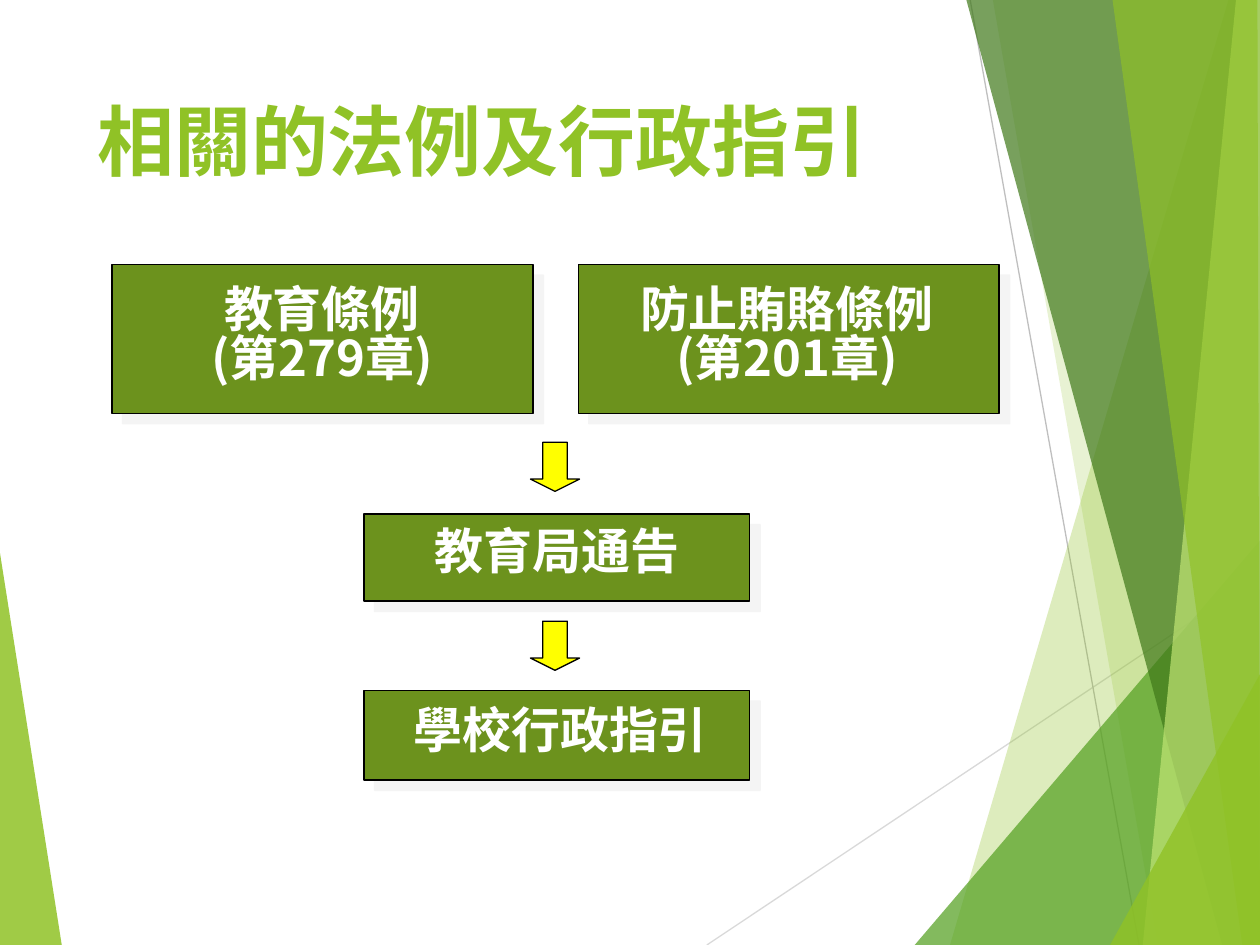
from lxml.etree import SubElement
from pptx import Presentation
from pptx.dml.color import RGBColor
from pptx.enum.shapes import MSO_CONNECTOR, MSO_SHAPE
from pptx.enum.text import MSO_ANCHOR, PP_ALIGN
from pptx.oxml.ns import qn
from pptx.util import Inches, Pt


def color(text):
    return RGBColor.from_string(text)


class Deck:
    lime = "90C226"
    moss = "6C921D"
    black = "000000"
    white = "FFFFFF"
    head = "Lato"
    body = "Noto Sans CJK SC"

    def __init__(self):
        self.file = Presentation()
        self.file.slide_width = Inches(10)
        self.file.slide_height = Inches(7.5)
        self.slide = self.file.slides.add_slide(self.file.slide_layouts[5])
        self.shapes = self.slide.shapes

    def paint(self, shape, fill, line=None):
        shape.shadow.inherit = False
        shape.fill.solid()
        shape.fill.fore_color.rgb = color(fill)
        if line:
            shape.line.color.rgb = color(line)
            shape.line.width = Pt(0.75)
        else:
            shape.line.fill.background()

    def add_text(self, para, text, size, font, ink):
        run = para.add_run()
        run.text = text
        run.font.size = Pt(size)
        run.font.bold = True
        run.font.name = font
        run.font.color.rgb = color(ink)
        SubElement(run.font._element, qn("a:ea"), typeface=font)

    def title(self, text, box):
        shape = self.shapes.title
        shape.left, shape.top, shape.width, shape.height = map(Inches, box)
        frame = shape.text_frame
        frame.vertical_anchor = MSO_ANCHOR.MIDDLE
        para = frame.paragraphs[0]
        para.alignment = PP_ALIGN.LEFT
        self.add_text(para, text, 44, self.head, self.lime)

    def facet(self, points, fill, alpha):
        spots = [(Inches(x), Inches(y)) for x, y in points]
        pen = self.shapes.build_freeform(*spots[0], scale=1.0)
        pen.add_line_segments(spots[1:], close=True)
        shape = pen.convert_to_shape()
        self.paint(shape, fill)
        tint = next(shape._element.spPr.iter(qn("a:srgbClr")))
        SubElement(tint, qn("a:alpha"), val=str(alpha * 1000))

    def line(self, start, end, ink):
        link = self.shapes.add_connector(
            MSO_CONNECTOR.STRAIGHT, *map(Inches, start + end))
        link.line.color.rgb = color(ink)
        link.line.width = Pt(0.75)
        SubElement(link._element.spPr, qn("a:effectLst"))

    def rect(self, box, line=None):
        shape = self.shapes.add_shape(MSO_SHAPE.RECTANGLE, *map(Inches, box))
        self.paint(shape, self.moss, line)
        return shape

    def panel(self, box):
        shape = self.rect(box, self.black)
        effect = shape._element.spPr.find(qn("a:effectLst"))
        shade = SubElement(effect, qn("a:outerShdw"), blurRad="0",
                           dist=str(Pt(8.5)), dir="2700000",
                           algn="ctr", rotWithShape="0")
        tint = SubElement(shade, qn("a:srgbClr"), val="EBEBEB")
        SubElement(tint, qn("a:alpha"), val="50000")

    def label(self, box, lines):
        frame = self.rect(box).text_frame
        frame.word_wrap = True
        frame.vertical_anchor = MSO_ANCHOR.MIDDLE
        para = frame.paragraphs[0]
        para.alignment = PP_ALIGN.CENTER
        para.line_spacing = 0.83
        for i, text in enumerate(lines):
            if i:
                para.add_line_break()
            self.add_text(para, text, 28, self.body, self.white)

    def arrow(self, left, top, size):
        shape = self.shapes.add_shape(
            MSO_SHAPE.DOWN_ARROW, *map(Inches, (left, top, size, size)))
        shape.adjustments[0] = 0.5
        shape.adjustments[1] = 0.25
        self.paint(shape, "FFFF00", self.black)


def main():
    deck = Deck()
    right, base = 10, 7.5
    corner = (right, base)

    deck.facet([(0, 4.39), (0.49, base), (0, base)], deck.lime, 85)
    deck.line((5.61, base), (right, 4.57), "D9D9D9")
    deck.line((7.7, 0), (9.04, base), "BFBFBF")

    facets = [
        ([(9.75, 0), (7.54, base), corner, (right, 0)], deck.lime, 30),
        ([(7.88, 0), (9.19, base), corner, (right, 0)], deck.lime, 20),
        ([(7.26, base), (right, 4.29), corner], "54A021", 72),
        ([(7.67, 0), (9.7, base), corner, (right, 0)], "3F7819", 70),
        ([(9.81, 0), (9.07, base), corner, (right, 0)], "C0E474", 70),
        ([(8.83, 0), (9.86, base), corner, (9.98, 0)], deck.lime, 65),
        ([(8.81, base), (right, 5.35), corner], deck.lime, 80),
    ]
    for points, fill, alpha in facets:
        deck.facet(points, fill, alpha)

    deck.title("相關的法例及行政指引", (0.67, 0.67, 6.94, 0.88))

    cards = [
        ((0.89, 2.1, 3.34, 1.18), (0.98, 2.16, 3.15, 1.03),
         ["教育條例", "(第279章)"]),
        ((4.59, 2.1, 3.34, 1.18), (4.73, 2.16, 3.03, 1.03),
         ["防止賄賂條例", "(第201章)"]),
        ((2.89, 4.08, 3.06, 0.69), (2.97, 4.12, 2.9, 0.57),
         ["教育局通告"]),
        ((2.89, 5.48, 3.06, 0.71), (2.95, 5.54, 2.99, 0.57),
         ["學校行政指引"]),
    ]
    for outer, inner, lines in cards:
        deck.panel(outer)
        deck.label(inner, lines)

    for top in (3.51, 4.93):
        deck.arrow(4.21, top, 0.39)

    deck.file.save("out.pptx")


if __name__ == "__main__":
    main()
